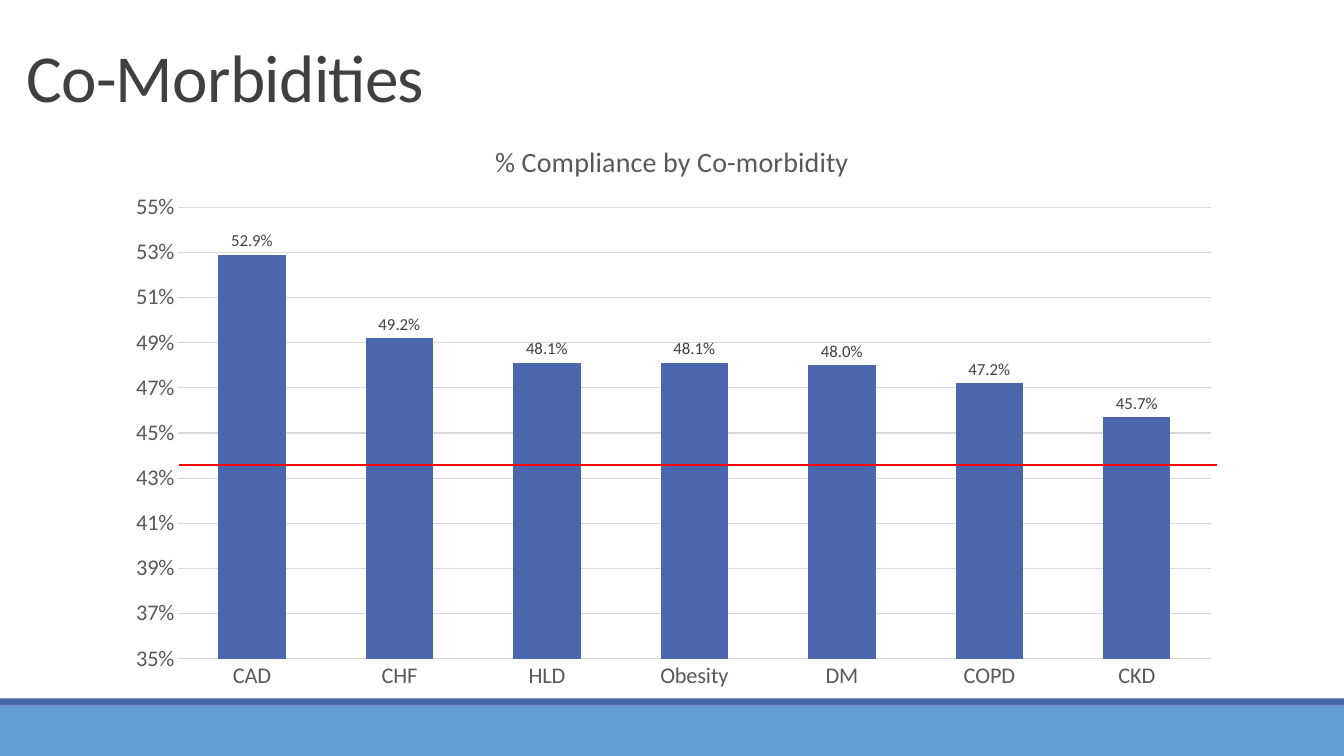
from lxml import etree
from pptx import Presentation
from pptx import util as u
from pptx.chart.data import CategoryChartData
from pptx.dml.color import RGBColor
from pptx.enum import chart as c, shapes, text
from pptx.oxml import parse_xml
from pptx.oxml.ns import nsdecls, qn

THEME = {
    "font": "Calibri",
    "color": {"bar": "4A66AC", "band": "629DD1", "title": "404040",
              "label": "595959", "grid": "D9D9D9", "target": "FF0000"},
    "size": {"title": 48, "chart_title": 20, "axis": 16, "value": 12},
}
COMPLIANCE = {"CAD": 0.529, "CHF": 0.492, "HLD": 0.481, "Obesity": 0.481,
              "DM": 0.48, "COPD": 0.472, "CKD": 0.457}


def color(name):
    return RGBColor.from_string(THEME["color"][name])


def style_font(font, size, ink):
    settings = {"name": THEME["font"], "size": u.Pt(THEME["size"][size]), "bold": False}
    for key, value in settings.items():
        setattr(font, key, value)
    font.color.rgb = color(ink)


deck = Presentation()
deck.slide_width, deck.slide_height = u.Inches(13.33), u.Inches(7.5)
page = deck.slides.add_slide(deck.slide_layouts.get_by_name("Title Only"))

# Footer bands
for top, height, fill in ((7, 0.5, "band"), (6.93, 0.07, "bar")):
    band = page.shapes.add_shape(shapes.MSO_SHAPE.RECTANGLE, 0, u.Inches(top),
                                 deck.slide_width, u.Inches(height))
    band.shadow.inherit = False
    band.fill.solid()
    band.fill.fore_color.rgb = color(fill)
    band.line.fill.background()

# Title
title = page.shapes.title
place = {"left": 0.16, "top": -0.39, "width": 11, "height": 1.59}
for key, value in place.items():
    setattr(title, key, u.Inches(value))
frame = title.text_frame
for key, value in {"word_wrap": True, "auto_size": text.MSO_AUTO_SIZE.NONE,
                   "vertical_anchor": text.MSO_ANCHOR.BOTTOM}.items():
    setattr(frame, key, value)
para = frame.paragraphs[0]
para.alignment, para.line_spacing = text.PP_ALIGN.LEFT, 0.85
span = para.add_run()
span.text = "Co-Morbidities"
style_font(span.font, "title", "title")
span.font._element.set("spc", "-50")

# Compliance chart
data = CategoryChartData(number_format="0.0%")
data.categories = list(COMPLIANCE)
data.add_series("Series 1", list(COMPLIANCE.values()))
chart = page.shapes.add_chart(c.XL_CHART_TYPE.COLUMN_CLUSTERED, u.Inches(1.1), u.Inches(1.19),
                              u.Inches(11.13), u.Inches(5.78), data).chart
chart.font.name, chart.font.size = THEME["font"], u.Pt(10)
chart.has_legend = False
chart.has_title = True
heading = chart.chart_title.text_frame.paragraphs[0].add_run()
heading.text = "% Compliance by Co-morbidity"
style_font(heading.font, "chart_title", "label")
chart.chart_title.include_in_layout = False

plot = chart.plots[0]
for key, value in {"gap_width": 119, "overlap": -27, "vary_by_categories": False,
                   "has_data_labels": True}.items():
    setattr(plot, key, value)
bars = plot.series[0].format.fill
bars.solid()
bars.fore_color.rgb = color("bar")
for key, value in {"show_value": True, "number_format": "0.0%",
                   "number_format_is_linked": False,
                   "position": c.XL_LABEL_POSITION.OUTSIDE_END}.items():
    setattr(plot.data_labels, key, value)
style_font(plot.data_labels.font, "value", "title")

values, categories = chart.value_axis, chart.category_axis
for key, value in {"minimum_scale": 0.35, "maximum_scale": 0.55, "major_unit": 0.02,
                   "has_major_gridlines": True}.items():
    setattr(values, key, value)
values.tick_labels.number_format = "0%"
values.tick_labels.number_format_is_linked = False
for axis in (values, categories):
    axis.major_tick_mark = axis.minor_tick_mark = c.XL_TICK_MARK.NONE
    style_font(axis.tick_labels.font, "axis", "label")
values.format.line.fill.background()
for line in (values.major_gridlines.format.line, categories.format.line):
    line.color.rgb = color("grid")
    line.width = u.Pt(0.75)

# Inner plot area, as shares of the chart
area = chart._chartSpace.chart.plotArea
for old in area.findall(qn("c:layout")):
    area.remove(old)
layout = parse_xml(f"<c:layout {nsdecls('c')}><c:manualLayout/></c:layout>")
for tag, value in {"layoutTarget": "inner", "xMode": "edge", "yMode": "edge",
                   "x": 0.06, "y": 0.15, "w": 0.92, "h": 0.775}.items():
    etree.SubElement(layout[0], qn(f"c:{tag}")).set("val", str(value))
area.insert(0, layout)

# Target line
target = page.shapes.add_connector(shapes.MSO_CONNECTOR.STRAIGHT, u.Inches(1.78), u.Inches(4.61),
                                   u.Inches(12.07), u.Inches(4.61))
target.line.color.rgb = color("target")
target.line.width = u.Pt(1.5)
etree.SubElement(target._element.spPr, qn("a:effectLst"))

deck.save("out.pptx")
